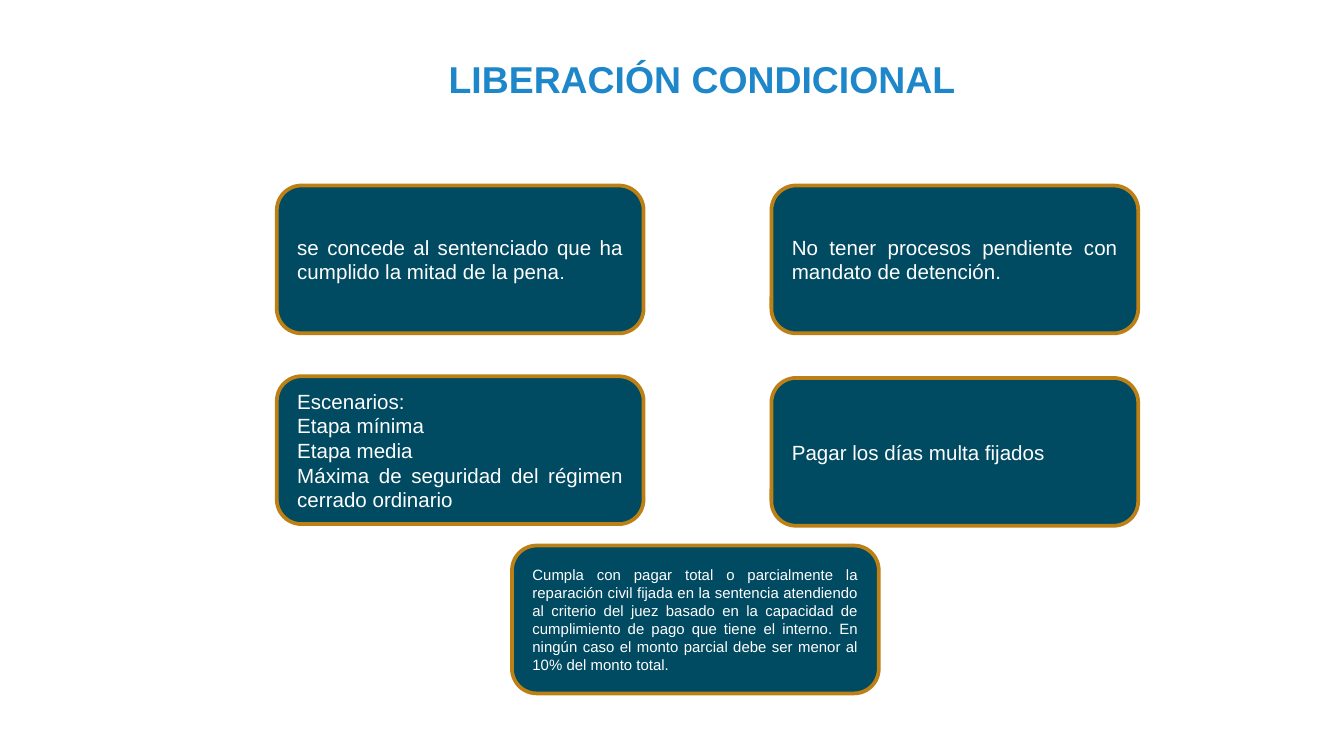
from dataclasses import dataclass

from pptx import Presentation
from pptx.dml.color import RGBColor
from pptx.enum.shapes import MSO_SHAPE
from pptx.enum.text import MSO_ANCHOR, MSO_AUTO_SIZE, PP_ALIGN
from pptx.util import Pt


@dataclass(frozen=True)
class Theme:
    font: str = "Arial"
    heading: RGBColor = RGBColor(0x1E, 0x87, 0xCA)
    card: RGBColor = RGBColor(0x00, 0x4A, 0x62)
    border: RGBColor = RGBColor(0xBD, 0x80, 0x15)
    card_text: RGBColor = RGBColor(0xFF, 0xFF, 0xFF)
    border_width: float = 2
    heading_size: float = 20
    body_size: float = 11
    stop_size: float = 10
    small_size: float = 8


class SlideBuilder:
    def __init__(self, slide, theme):
        self.slide = slide
        self.theme = theme

    def add_run(self, paragraph, text, size, color, bold=False):
        run = paragraph.add_run()
        run.text = text
        run.font.name = self.theme.font
        run.font.size = Pt(size)
        run.font.bold = bold
        run.font.color.rgb = color

    def heading(self, text, left, top, width, height):
        box = self.slide.shapes.add_textbox(Pt(left), Pt(top), Pt(width), Pt(height))
        frame = box.text_frame
        frame.word_wrap = True
        frame.auto_size = MSO_AUTO_SIZE.SHAPE_TO_FIT_TEXT
        self.add_run(frame.paragraphs[0], text, self.theme.heading_size,
                     self.theme.heading, bold=True)

    def card(self, paragraphs, left, top, width, height):
        """Each paragraph is a list of (text, size) runs."""
        card = self.slide.shapes.add_shape(
            MSO_SHAPE.ROUNDED_RECTANGLE, Pt(left), Pt(top), Pt(width), Pt(height))
        card.shadow.inherit = False
        card.fill.solid()
        card.fill.fore_color.rgb = self.theme.card
        card.line.color.rgb = self.theme.border
        card.line.width = Pt(self.theme.border_width)
        frame = card.text_frame
        frame.word_wrap = True
        frame.vertical_anchor = MSO_ANCHOR.MIDDLE
        for index, runs in enumerate(paragraphs):
            paragraph = frame.add_paragraph() if index else frame.paragraphs[0]
            paragraph.alignment = PP_ALIGN.JUSTIFY
            for text, size in runs:
                self.add_run(paragraph, text, size, self.theme.card_text)


def main():
    presentation = Presentation()
    presentation.slide_width, presentation.slide_height = Pt(720), Pt(405)
    theme = Theme()
    builder = SlideBuilder(
        presentation.slides.add_slide(presentation.slide_layouts[6]), theme)

    # Heading
    builder.heading("LIBERACIÓN CONDICIONAL", 233.3, 26.6, 360, 31.7)

    # Requirements: two columns, with the payment condition below
    card_width, card_height = 196.5, 79.2
    left_column, right_column, middle = 148.3, 413.3, 274.3
    first_row, second_row, last_row = 99.4, 201.6, 292.3
    body, small = theme.body_size, theme.small_size

    half_sentence = [[
        ("se concede al sentenciado que ha cumplido la mitad de la pena", body),
        (".", theme.stop_size)]]
    no_proceedings = [[
        ("No tener procesos pendiente con mandato de detención.", body)]]
    scenarios = [[(line, body)] for line in (
        "Escenarios:", "Etapa mínima", "Etapa media",
        "Máxima de seguridad del régimen cerrado ordinario")]
    fine = [[("Pagar los días multa fijados", body)]]
    reparation = [[(
        "Cumpla con pagar total o parcialmente la reparación civil fijada en la "
        "sentencia atendiendo al criterio del juez basado en la capacidad de "
        "cumplimiento de pago que tiene el interno. En ningún caso el monto "
        "parcial debe ser menor al 10% del monto total.", small)]]

    for requirement, left, top in (
        (half_sentence, left_column, first_row),
        (no_proceedings, right_column, first_row),
        (scenarios, left_column, second_row),
        (fine, right_column, second_row + 0.9),
        (reparation, middle, last_row),
    ):
        builder.card(requirement, left, top, card_width, card_height)

    presentation.save("out.pptx")


if __name__ == "__main__":
    main()
